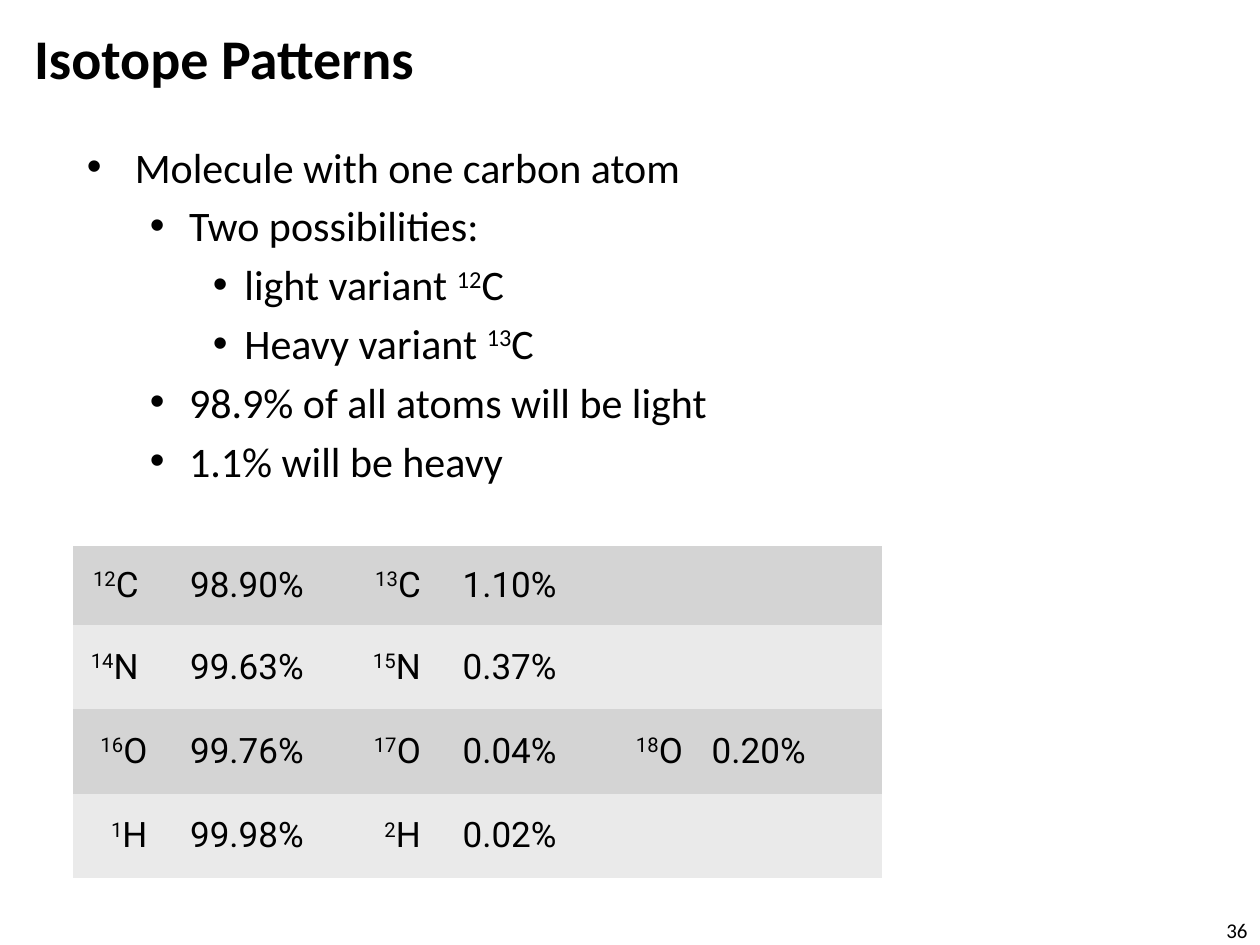
"""Build the isotope patterns slide with its abundance table."""
from lxml.etree import SubElement
from pptx import Presentation
from pptx.dml.color import RGBColor as Color
from pptx.enum.text import MSO_ANCHOR as Anchor, MSO_AUTO_SIZE as AutoSize, PP_ALIGN as Align
from pptx.oxml.ns import qn
from pptx.util import Inches, Pt

THEME = {
    "text": Color.from_string("000000"),
    "bands": [Color.from_string("D4D4D4"), Color.from_string("EAEAEA")],
    "body_font": "Calibri", "table_font": "Roboto",
    "title": 32, "body": 24, "table": 20, "number": 12,
    "table_style": "{2D5ABB26-0587-4C30-8999-92F81FD0307C}",
}
TITLE = "Isotope Patterns"
PAGE_NUMBER = "36"
BULLETS = [
    (0, ["Molecule with one carbon atom"]),
    (1, ["Two possibilities:"]),
    (2, ["light variant ", ("12",), "C"]),
    (2, ["Heavy variant ", ("13",), "C"]),
    (1, ["98.9% of all atoms will be light"]),
    (1, ["1.1% will be heavy"]),
]
INDENTS = [(0.38, -0.38), (0.81, -0.31), (1.25, -0.25)]
ISOTOPES = [
    [("12", "C ", "98.90%"), ("13", "C", "1.10%")],
    [("14", "N ", "99.63%"), ("15", "N", "0.37%")],
    [("16", "O", "99.76%"), ("17", "O", "0.04%"), ("18", "O", " 0.20%")],
    [("1", "H", "99.98%"), ("2", "H", "0.02%")],
]
COLUMN_WIDTHS = [0.75, 1.42, 0.75, 1.25, 0.83, 1.42]
ROW_HEIGHTS = [0.63, 0.67, 0.67, 0.67]
COLUMN_ALIGNS = [Align.RIGHT, Align.CENTER, Align.RIGHT, Align.CENTER, Align.RIGHT, Align.LEFT]


def place(shape, left, top, width, height):
    shape.left, shape.top = Inches(left), Inches(top)
    shape.width, shape.height = Inches(width), Inches(height)


def write(para, parts, size, face, align=Align.LEFT, bold=False):
    """Write the parts as runs; a part in a tuple is superscript."""
    for part in parts:
        span = para.add_run()
        span.text = part[0] if isinstance(part, tuple) else part
        if isinstance(part, tuple):
            span.font._element.set("baseline", "30000")
    para.alignment = align
    font = para.font
    font.size, font.name, font.bold = Pt(size), face, bold
    font.color.rgb = THEME["text"]


def add_bullet(para, level):
    para.level = level
    props = para._p.get_or_add_pPr()
    margin, indent = INDENTS[level]
    props.set("marL", str(Inches(margin)))
    props.set("indent", str(Inches(indent)))
    SubElement(props, qn("a:buFont")).set("typeface", "Arial")
    SubElement(props, qn("a:buChar")).set("char", "•")


def fill_body(body):
    frame = body.text_frame
    frame.auto_size = AutoSize.NONE
    for index, (level, parts) in enumerate(BULLETS):
        para = frame.add_paragraph() if index else frame.paragraphs[0]
        add_bullet(para, level)
        write(para, parts, THEME["body"], THEME["body_font"])
    frame.paragraphs[0].space_before = Pt(0)


def add_isotope_table(page):
    frame = page.shapes.add_table(
        len(ISOTOPES), len(COLUMN_WIDTHS), Inches(0.58), Inches(4.33),
        Inches(sum(COLUMN_WIDTHS)), Inches(sum(ROW_HEIGHTS)))
    table = frame.table
    table.first_row = table.horz_banding = False
    table._tbl.tblPr.find(qn("a:tableStyleId")).text = THEME["table_style"]
    for column, width in zip(table.columns, COLUMN_WIDTHS):
        column.width = Inches(width)
    for index, (row, height, isotopes) in enumerate(zip(table.rows, ROW_HEIGHTS, ISOTOPES)):
        row.height = Inches(height)
        contents = [parts for mass, symbol, share in isotopes
                    for parts in ([(mass,), symbol], [share])]
        contents += [[]] * (len(COLUMN_WIDTHS) - len(contents))
        for cell, parts, align in zip(row.cells, contents, COLUMN_ALIGNS):
            cell.fill.solid()
            cell.fill.fore_color.rgb = THEME["bands"][index % 2]
            cell.vertical_anchor = Anchor.MIDDLE
            cell.margin_left = cell.margin_top = cell.margin_bottom = 0
            cell.margin_right = Inches(0.16)
            write(cell.text_frame.paragraphs[0], parts, THEME["table"], THEME["table_font"], align)


def main():
    deck = Presentation()
    deck.slide_width, deck.slide_height = Inches(10), Inches(7.5)
    page = deck.slides.add_slide(deck.slide_layouts[1])
    title, body = page.placeholders
    place(title, 0.17, 0.08, 7.33, 0.75)
    title.text_frame.auto_size = AutoSize.NONE
    title.text_frame.vertical_anchor = Anchor.MIDDLE
    write(title.text_frame.paragraphs[0], [TITLE], THEME["title"], THEME["body_font"], bold=True)
    place(body, 0.59, 1.07, 8.66, 3.09)
    fill_body(body)
    add_isotope_table(page)
    number = page.shapes.add_textbox(Inches(7.5), Inches(7.27), Inches(2.5), Inches(0.23))
    number.text_frame.word_wrap = True
    number.text_frame.vertical_anchor = Anchor.MIDDLE
    write(number.text_frame.paragraphs[0], [PAGE_NUMBER], THEME["number"],
          THEME["body_font"], Align.RIGHT)
    deck.save("out.pptx")


if __name__ == "__main__":
    main()
